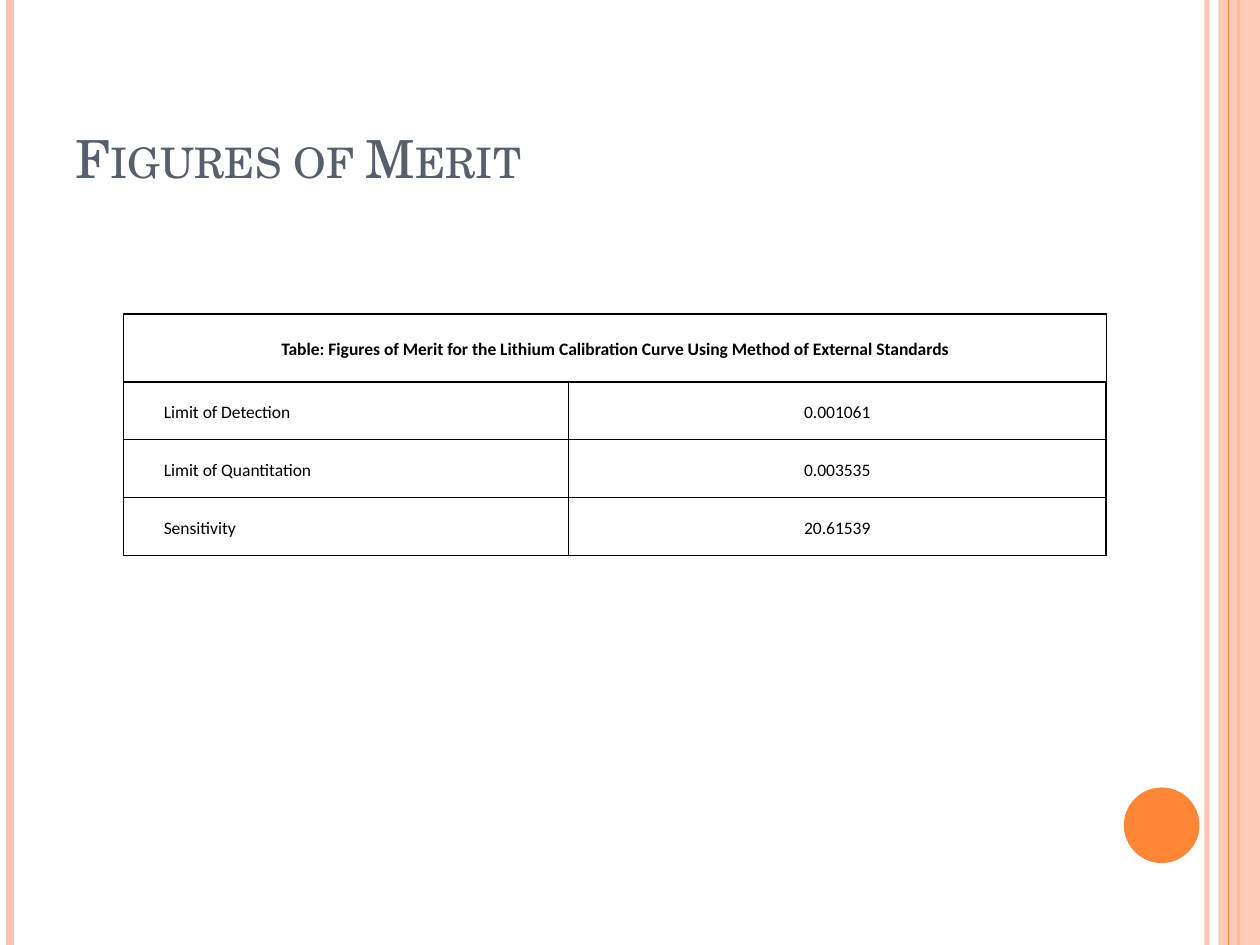
from dataclasses import dataclass
from typing import Optional

from lxml.etree import SubElement
from pptx import Presentation
from pptx.dml.color import RGBColor
from pptx.enum.shapes import MSO_CONNECTOR, MSO_SHAPE
from pptx.enum.text import MSO_ANCHOR, PP_ALIGN
from pptx.oxml.ns import qn
from pptx.util import Inches, Pt

COLORS = {"peach": "FEC3AE", "orange": "FE8637", "slate": "575F6D", "black": "000000"}
TITLE_FONT = {"name": "TeX Gyre Schola", "size": Pt(30), "bold": False}
TABLE_FONT = {"name": "Calibri", "size": Pt(10)}
SLIDE_H = 7.5
THICK, THIN = 1, 0.5


@dataclass
class Stripe:
    x: float
    color: str
    width: float
    opacity: Optional[int] = None


@dataclass
class Block:
    kind: MSO_SHAPE
    box: tuple[float, float, float, float]
    color: str
    opacity: Optional[int] = None


@dataclass
class Merit:
    label: str
    value: str


DECORATION = [
    Stripe(9.58, "peach", 3, 93),
    Stripe(0.08, "peach", 4.5),
    Stripe(9.83, "orange", 1.5),
    Block(MSO_SHAPE.RECTANGLE, (9.67, 0, 0.33, SLIDE_H), "peach", 87),
    Stripe(9.75, "orange", 0.75),
    Block(MSO_SHAPE.OVAL, (8.92, 6.25, 0.6, 0.6), "orange"),
]
CAPTION = ("Table: Figures of Merit for the Lithium Calibration Curve "
           "Using Method of External Standards")
MERITS = [
    Merit("Limit of Detection", "0.001061"),
    Merit("Limit of Quantitation", "0.003535"),
    Merit("Sensitivity", "20.61539"),
]
COL_WIDTHS = [3.53, 4.27]
ROW_HEIGHTS = [0.54] + [0.46] * len(MERITS)


def rgb(name: str) -> RGBColor:
    return RGBColor.from_string(COLORS[name])


def set_opacity(element, percent: Optional[int]) -> None:
    if percent is not None:
        color = next(element.iter(qn("a:srgbClr")))
        SubElement(color, qn("a:alpha"), val=str(percent * 1000))


def format_font(font, values: dict, color: str) -> None:
    for name, value in values.items():
        setattr(font, name, value)
    font.color.rgb = rgb(color)


def draw_stripe(s, stripe: Stripe) -> None:
    x = Inches(stripe.x)
    line = s.shapes.add_connector(MSO_CONNECTOR.STRAIGHT, x, 0, x, Inches(SLIDE_H))
    line.line.color.rgb = rgb(stripe.color)
    line.line.width = Pt(stripe.width)
    sp_pr = line._element.spPr
    set_opacity(sp_pr, stripe.opacity)
    SubElement(sp_pr, qn("a:effectLst"))


def draw_block(s, block: Block) -> None:
    sp = s.shapes.add_shape(block.kind, *map(Inches, block.box))
    sp.shadow.inherit = False
    sp.fill.solid()
    sp.fill.fore_color.rgb = rgb(block.color)
    sp.line.fill.background()
    set_opacity(sp._element.spPr, block.opacity)


def write_title(s, text: str) -> None:
    sp = s.shapes.title
    sp.left, sp.top, sp.width, sp.height = map(Inches, (0.5, 0.3, 8.17, 1.25))
    tf = sp.text_frame
    tf.vertical_anchor = MSO_ANCHOR.BOTTOM
    p = tf.paragraphs[0]
    p.alignment = PP_ALIGN.LEFT
    r = p.add_run()
    r.text = text
    format_font(r.font, TITLE_FONT, "slate")
    r.font._element.set("cap", "small")


def set_borders(cell, row: int, col: int) -> None:
    """Thick around the table and under the caption, thin elsewhere."""
    last_row, last_col = len(ROW_HEIGHTS) - 1, len(COL_WIDTHS) - 1
    thick = {
        "L": col == 0,
        "R": col == last_col,
        "T": row <= 1,
        "B": row in (0, last_row),
    }
    tc_pr = cell._tc.get_or_add_tcPr()
    for side, is_thick in thick.items():
        width = Pt(THICK if is_thick else THIN)
        ln = SubElement(tc_pr, qn(f"a:ln{side}"), w=str(width))
        fill = SubElement(ln, qn("a:solidFill"))
        SubElement(fill, qn("a:srgbClr"), val=COLORS["black"])


def write_cell(cell, text: str, align: PP_ALIGN, bold: bool, indent: float) -> None:
    cell.margin_left, cell.margin_right = Inches(0.07 + indent), Inches(0.07)
    cell.margin_top = cell.margin_bottom = 0
    cell.vertical_anchor = MSO_ANCHOR.MIDDLE
    p = cell.text_frame.paragraphs[0]
    p.alignment, p.line_spacing = align, 1.15
    r = p.add_run()
    r.text = text
    format_font(r.font, TABLE_FONT | {"bold": bold}, "black")


def draw_table(s) -> None:
    frame = s.shapes.add_table(
        len(ROW_HEIGHTS), len(COL_WIDTHS), Inches(0.98), Inches(2.49),
        Inches(sum(COL_WIDTHS)), Inches(sum(ROW_HEIGHTS)))
    table = frame.table
    table.first_row = table.horz_banding = False
    for column, width in zip(table.columns, COL_WIDTHS):
        column.width = Inches(width)
    for row, height in zip(table.rows, ROW_HEIGHTS):
        row.height = Inches(height)
    for i in range(len(ROW_HEIGHTS)):
        for j in range(len(COL_WIDTHS)):
            cell = table.cell(i, j)
            set_borders(cell, i, j)
            cell.fill.background()

    table.cell(0, 0).merge(table.cell(0, 1))
    write_cell(table.cell(0, 0), CAPTION, PP_ALIGN.CENTER, True, 0)
    for i, merit in enumerate(MERITS, start=1):
        write_cell(table.cell(i, 0), merit.label, PP_ALIGN.LEFT, False, 0.25)
        write_cell(table.cell(i, 1), merit.value, PP_ALIGN.CENTER, False, 0)


def main() -> None:
    prs = Presentation()
    prs.slide_width, prs.slide_height = Inches(10), Inches(SLIDE_H)
    s = prs.slides.add_slide(prs.slide_layouts[5])
    for item in DECORATION:
        if isinstance(item, Stripe):
            draw_stripe(s, item)
        else:
            draw_block(s, item)
    write_title(s, "Figures of Merit")
    draw_table(s)
    prs.save("out.pptx")


if __name__ == "__main__":
    main()
